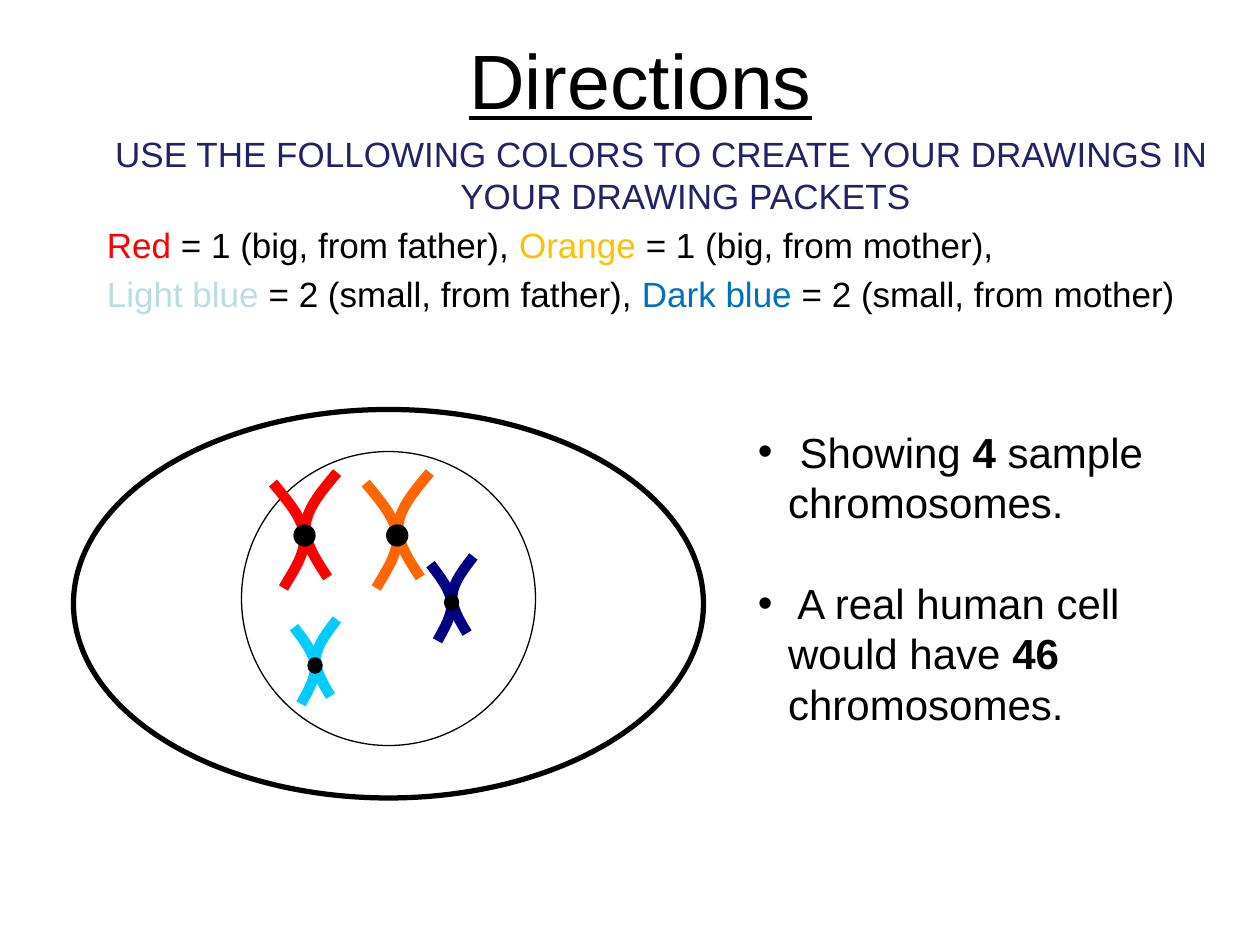
from lxml import etree
from pptx import Presentation
from pptx.dml.color import RGBColor
from pptx.enum.shapes import MSO_SHAPE
from pptx.enum.text import MSO_ANCHOR, PP_ALIGN
from pptx.oxml.ns import qn
from pptx.util import Inches, Pt

OVAL = MSO_SHAPE.OVAL
TOP, MIDDLE = MSO_ANCHOR.TOP, MSO_ANCHOR.MIDDLE
LEFT, CENTER = PP_ALIGN.LEFT, PP_ALIGN.CENTER

COLORS = {
    "black": "000000", "heading": "222267", "red": "FF0000",
    "amber": "FFC000", "pale": "BADDE1", "blue": "0070C0",
    "orange": "FF6600", "navy": "000080", "sky": "00CCFF",
}
LEFT_ARM = [(0, 1), (1.4, 2.7), (2.8, 4.3), (3, 6), (3.1, 7.7), (2, 9.3), (1, 11)]
RIGHT_ARM = [(6.1, 0), (4.7, 1.7), (3.3, 3.3), (3.1, 5), (3, 6.7), (4.1, 8.3), (5.2, 10)]
BIG, SMALL = (1, 1), (0.67, 0.73)


class CellSlide:
    font = "Arial"
    columns = 120

    def __init__(self, deck):
        self.slide = deck.slides.add_slide(deck.slide_layouts[6])
        self.unit = deck.slide_width / self.columns

    def grid(self, *cells):
        return [round(cell * self.unit) for cell in cells]

    def color(self, name):
        return RGBColor.from_string(COLORS[name])

    def text(self, box, anchor=TOP):
        frame = self.slide.shapes.add_textbox(*self.grid(*box)).text_frame
        frame.word_wrap = True
        frame.vertical_anchor = anchor
        return frame

    def paragraph(self, frame, runs, size, align=LEFT, before=0, hang=0, bullet=None):
        first = not frame.paragraphs[0].runs
        paragraph = frame.paragraphs[0] if first else frame.add_paragraph()
        paragraph.alignment = align
        paragraph.space_before = Pt(before)
        if hang:
            properties = paragraph._p.get_or_add_pPr()
            properties.set("marL", str(Inches(hang)))
            properties.set("indent", str(-Inches(hang)))
            if bullet:
                etree.SubElement(properties, qn("a:buFont")).set("typeface", self.font)
                etree.SubElement(properties, qn("a:buChar")).set("char", bullet)
        for words, color, bold in runs:
            run = paragraph.add_run()
            run.text = words
            run.font.name = self.font
            run.font.size = Pt(size)
            run.font.bold = bold
            run.font.color.rgb = self.color(color)
        return paragraph

    def oval(self, box, weight, fill=None, shapes=None):
        shapes = self.slide.shapes if shapes is None else shapes
        oval = shapes.add_shape(OVAL, *self.grid(*box))
        self.outline(oval, "black", weight, fill)

    def outline(self, shape, color, weight, fill=None):
        shape.shadow.inherit = False
        shape.line.color.rgb = self.color(color)
        shape.line.width = Pt(weight)
        if fill:
            shape.fill.solid()
            shape.fill.fore_color.rgb = self.color(fill)
        else:
            shape.fill.background()

    def curve(self, shapes, points, color):
        anchors = points[::3]
        builder = shapes.build_freeform(*anchors[0])
        builder.add_line_segments(anchors[1:], close=False)
        curve = builder.convert_to_shape()
        origin_x, origin_y = (min(axis) for axis in zip(*anchors))
        segments = list(curve._element.iter(qn("a:lnTo")))
        for index, segment in enumerate(segments):
            bend = etree.Element(qn("a:cubicBezTo"))
            for x, y in points[3 * index + 1:3 * index + 4]:
                point = etree.SubElement(bend, qn("a:pt"))
                point.set("x", str(x - origin_x))
                point.set("y", str(y - origin_y))
            segment.getparent().replace(segment, bend)
        self.outline(curve, color, 6)

    def chromosome(self, left, top, scale, color):
        shapes = self.slide.shapes.add_group_shape().shapes
        across, down = scale
        for arm in (LEFT_ARM, RIGHT_ARM):
            points = [self.grid(left + x * across, top + y * down) for x, y in arm]
            self.curve(shapes, points, color)
        centromere = (left + 2 * across, top + 5 * down, 2 * across, 2 * down)
        self.oval(centromere, 0.75, "black", shapes)


def main():
    deck = Presentation()
    deck.slide_width, deck.slide_height = Inches(10), Inches(7.5)
    page = CellSlide(deck)

    title = page.text((7, 0, 108, 15), MIDDLE)
    heading = page.paragraph(title, [("Directions", "black", False)], 44, CENTER)
    heading.runs[0].font.underline = True

    color_key = page.text((9, 12, 108, 21))
    instruction = "USE THE FOLLOWING COLORS TO CREATE YOUR DRAWINGS IN YOUR DRAWING PACKETS"
    for align, runs in (
        (CENTER, [(instruction, "heading", False)]),
        (LEFT, [("Red", "red", False), (" = 1 (big, from father), ", "black", False),
                ("Orange", "amber", False), (" = 1 (big, from mother),", "black", False)]),
        (LEFT, [("Light blue ", "pale", False), ("= 2 (small, from father), ", "black", False),
                ("Dark blue ", "blue", False), ("= 2 (small, from mother)", "black", False)]),
    ):
        page.paragraph(color_key, runs, 20, align, before=4, hang=0.38)

    page.oval((7, 39, 60, 37), 3)
    page.oval((23, 43, 28, 28), 0.75)
    for left, top, scale, color in (
        (26, 45, BIG, "red"),
        (34.83, 45, BIG, "orange"),
        (41, 53, SMALL, "navy"),
        (28, 59, SMALL, "sky"),
    ):
        page.chromosome(left, top, scale, color)

    facts = page.text((71, 40, 43, 40))
    for before, runs in (
        (0, [(" Showing ", "black", False), ("4 ", "black", True),
             ("sample chromosomes.", "black", False)]),
        (28.8, [(" A real human cell would have ", "black", False), ("46", "black", True),
                (" chromosomes.", "black", False)]),
    ):
        page.paragraph(facts, runs, 24, before=before, hang=0.24, bullet="•")

    deck.save("out.pptx")


if __name__ == "__main__":
    main()
